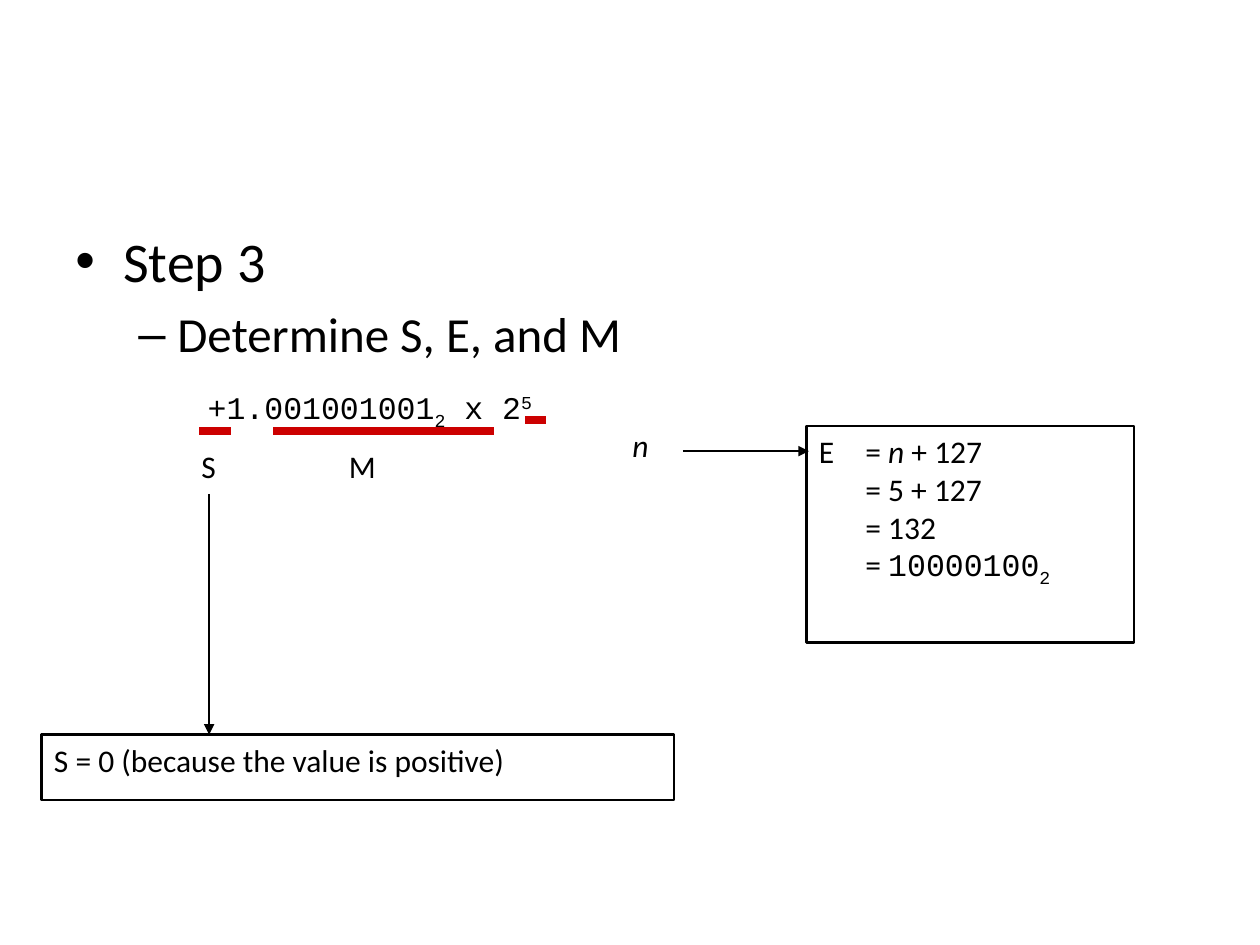
from lxml import etree
from pptx import Presentation
from pptx.dml.color import RGBColor
from pptx.enum import shapes, text
from pptx.oxml import ns
from pptx.util import Inches, Pt

THEME = {
    "ink": RGBColor.from_string("000000"),
    "accent": RGBColor.from_string("CC0000"),
    "sans": "Calibri",
    "mono": "Courier New",
    "body": 18,
    "thin": 1.5,
    "thick": 4.5,
}
MONO = {"name": THEME["mono"]}
ITALIC = {"italic": True}
SUB = {**MONO, "baseline": -25000}
SUPER = {**MONO, "baseline": 30000}

OUTLINE_BOX = (0.5, 1.75, 9, 4.95)
OUTLINE = [
    ("Step 3", 32, "•", 0, 0.38, 0.38),
    ("Determine S, E, and M", 28, "–", 1, 0.81, 0.31),
]
LABELS = [
    ((1.55, 3.03, 3.66, 0.5),
     [[("+1.001001001", MONO), ("2", SUB), (" x 2", MONO), ("5", SUPER)]]),
    ((2.67, 3.5, 0.5, 0.5), [[("M", {})]]),
    ((1.5, 3.5, 0.39, 0.5), [[("S", {})]]),
    ((4.92, 3.33, 0.37, 0.5), [[("n", ITALIC)]]),
]
RESULTS = [
    ((0.33, 5.83, 5.02, 0.52), [[("S = 0 (because the value is positive)", {})]]),
    ((6.4, 3.38, 2.6, 1.72), [
        [("E\t= ", {}), ("n", ITALIC), (" + 127", {})],
        [("\t= 5 + 127", {})],
        [("\t= 132", {})],
        [("\t= ", {}), ("10000100", MONO), ("2", SUB)],
    ]),
]
EXPONENT_TAB = 0.37
UNDERLINES = [(2.17, 3.42, 3.92), (1.58, 3.42, 1.83), (4.17, 3.33, 4.33)]
ARROWS = [(1.66, 3.92, 1.66, 5.83), (5.42, 3.58, 6.42, 3.58)]


def inches(values):
    return [Inches(value) for value in values]


def add_child(parent, tag, **attributes):
    return etree.SubElement(parent, ns.qn(tag), attributes)


def add_run(paragraph, words, size, style):
    run = paragraph.add_run()
    run.text = words
    run.font.color.rgb = THEME["ink"]
    formats = {"name": THEME["sans"], "size": Pt(size), **style}
    baseline = formats.pop("baseline", None)
    for name, value in formats.items():
        setattr(run.font, name, value)
    if baseline:
        run._r.get_or_add_rPr().set("baseline", str(baseline))


def prepare_frame(shape):
    frame = shape.text_frame
    formats = {
        "word_wrap": True,
        "auto_size": text.MSO_AUTO_SIZE.NONE,
        "vertical_anchor": text.MSO_ANCHOR.TOP,
    }
    for name, value in formats.items():
        setattr(frame, name, value)
    return frame


def each_paragraph(frame, items):
    for index, item in enumerate(items):
        paragraph = frame.add_paragraph() if index else frame.paragraphs[0]
        paragraph.alignment = text.PP_ALIGN.LEFT
        yield paragraph, item


def write_lines(shape, lines):
    for paragraph, runs in each_paragraph(prepare_frame(shape), lines):
        if any("\t" in words for words, style in runs):
            tabs = add_child(paragraph._p.get_or_add_pPr(), "a:tabLst")
            add_child(tabs, "a:tab", pos=str(Inches(EXPONENT_TAB)), algn="l")
        for words, style in runs:
            add_run(paragraph, words, THEME["body"], style)


def add_outline(slide):
    shape = slide.shapes.add_textbox(*inches(OUTLINE_BOX))
    for paragraph, item in each_paragraph(prepare_frame(shape), OUTLINE):
        words, size, bullet, level, margin, hanging = item
        paragraph.level = level
        paragraph.space_before = Pt(size * 0.2)
        properties = paragraph._p.get_or_add_pPr()
        properties.set("marL", str(Inches(margin)))
        properties.set("indent", str(-Inches(hanging)))
        add_child(properties, "a:buFont", typeface="Arial")
        add_child(properties, "a:buChar", char=bullet)
        add_run(paragraph, words, size, {})


def add_result(slide, box, lines):
    shape = slide.shapes.add_shape(shapes.MSO_SHAPE.RECTANGLE, *inches(box))
    shape.shadow.inherit = False
    shape.fill.background()
    shape.line.color.rgb = THEME["ink"]
    shape.line.width = Pt(THEME["thin"])
    write_lines(shape, lines)


def add_line(slide, ends, color, width, arrow=False):
    connector = slide.shapes.add_connector(shapes.MSO_CONNECTOR.STRAIGHT, *inches(ends))
    connector.line.color.rgb = THEME[color]
    connector.line.width = Pt(THEME[width])
    if arrow:
        add_child(connector.line._get_or_add_ln(), "a:tailEnd", type="triangle")
    add_child(connector._element.spPr, "a:effectLst")


def main():
    presentation = Presentation()
    presentation.slide_width, presentation.slide_height = inches((10, 7.5))
    slide = presentation.slides.add_slide(presentation.slide_layouts[6])
    add_outline(slide)
    for box, lines in LABELS:
        write_lines(slide.shapes.add_textbox(*inches(box)), lines)
    for box, lines in RESULTS:
        add_result(slide, box, lines)
    for left, top, right in UNDERLINES:
        add_line(slide, (left, top, right, top), "accent", "thick")
    for ends in ARROWS:
        add_line(slide, ends, "ink", "thin", arrow=True)
    presentation.save("out.pptx")


if __name__ == "__main__":
    main()
